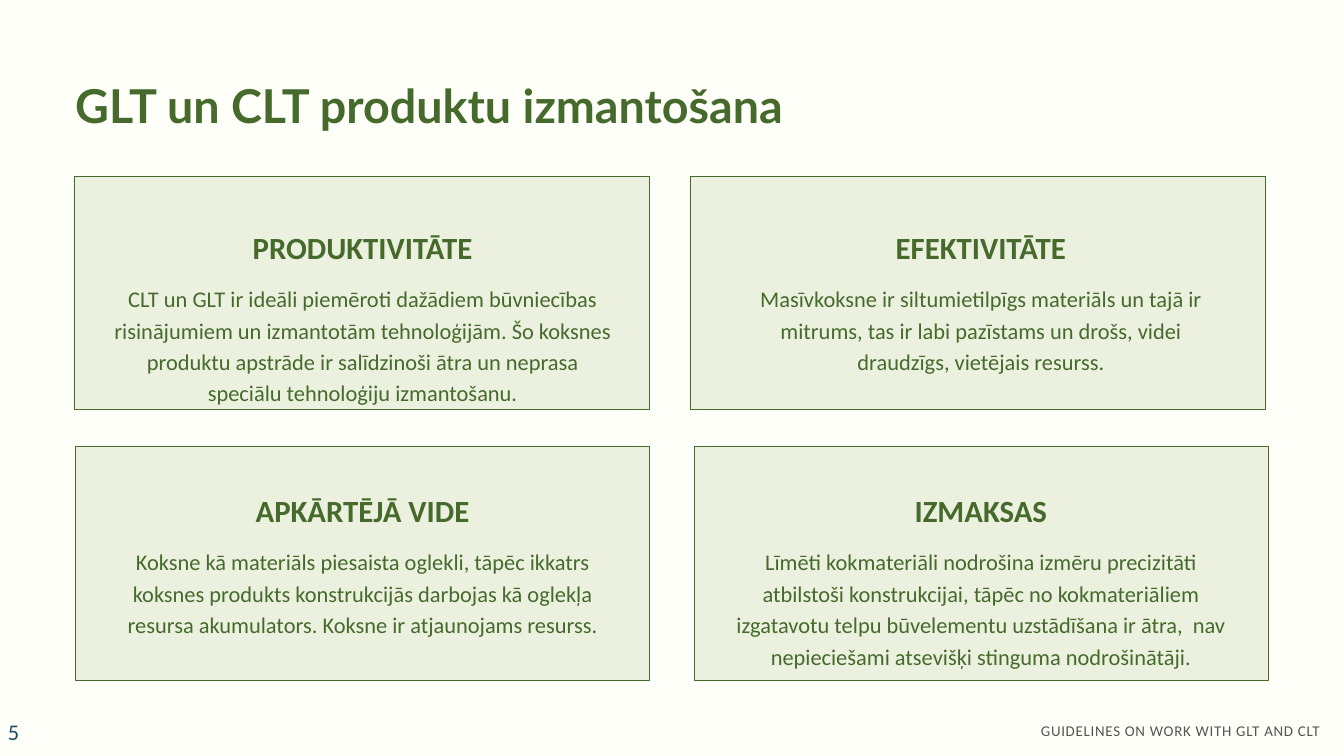
"""Build the slide on the use of GLT and CLT products."""
from pptx import Presentation
from pptx.dml.color import RGBColor
from pptx.enum.shapes import MSO_SHAPE as SHAPE
from pptx.enum.text import MSO_ANCHOR as ANCHOR, MSO_AUTO_SIZE as AUTO, PP_ALIGN as ALIGN
from pptx.util import Cm, Pt

COLORS = {
    "background": "FEFFF8",
    "green": "456A2C",
    "card": "EBF1DE",
    "footer": "52584D",
    "number": "1E4D65",
}
CARDS = [
    (2.82, 6.65, 4.32, 8.59, 4.85, "PRODUKTIVITĀTE",
     "CLT un GLT ir ideāli piemēroti dažādiem būvniecības risinājumiem un izmantotām "
     "tehnoloģijām. Šo koksnes produktu apstrāde ir salīdzinoši ātra un neprasa "
     "speciālu tehnoloģiju izmantošanu."),
    (26.11, 6.65, 27.69, 8.59, 3.63, "EFEKTIVITĀTE",
     "Masīvkoksne ir siltumietilpīgs materiāls un tajā ir mitrums, tas ir labi pazīstams "
     "un drošs, videi draudzīgs, vietējais resurss."),
    (2.84, 16.87, 4.32, 18.54, 3.63, "APKĀRTĒJĀ VIDE",
     "Koksne kā materiāls piesaista oglekli, tāpēc ikkatrs koksnes produkts konstrukcijās "
     "darbojas kā oglekļa resursa akumulators. Koksne ir atjaunojams resurss."),
    (26.24, 16.87, 27.69, 18.54, 4.85, "IZMAKSAS",
     "Līmēti kokmateriāli nodrošina izmēru precizitāti atbilstoši konstrukcijai, tāpēc no "
     "kokmateriāliem izgatavotu telpu būvelementu uzstādīšana ir ātra,  nav nepieciešami "
     "atsevišķi stinguma nodrošinātāji."),
]


def color(name):
    return RGBColor.from_string(COLORS[name])


def write(sp, text, size, spacing=None, align=ALIGN.CENTER, font="Calibri",
          ink="green", bold=False, tracking=0):
    tf = sp.text_frame
    tf.word_wrap = True
    tf.auto_size = AUTO.NONE
    tf.vertical_anchor = ANCHOR.TOP
    tf.margin_left = tf.margin_top = tf.margin_right = tf.margin_bottom = 0
    p = tf.paragraphs[0]
    p.alignment = align
    if spacing:
        p.line_spacing = Pt(spacing)
    p.font.name = font
    p.font.size = Pt(size)
    p.font.bold = bold
    p.font.color.rgb = color(ink)
    r = p.add_run()
    r.text = text
    if tracking:
        r._r.get_or_add_rPr().set("spc", str(tracking))
    return tf


prs = Presentation()
prs.slide_width, prs.slide_height = Cm(50.8), Cm(28.58)
s = prs.slides.add_slide(prs.slide_layouts[5])
s.background.fill.solid()
s.background.fill.fore_color.rgb = color("background")

title = s.shapes.title
title.left, title.top, title.width, title.height = Cm(2.84), Cm(2.67), Cm(44.98), Cm(2.18)
write(title, "GLT un CLT produktu izmantošana", 50, 66.8, ALIGN.LEFT, "Lato", bold=True)

footer = s.shapes.add_textbox(Cm(28.78), Cm(27.18), Cm(21.13), Cm(0.74))
write(footer, "GUIDELINES ON WORK WITH GLT AND CLT", 16, 22.4, ALIGN.RIGHT,
      ink="footer", tracking=80)

for left, top, text_left, text_top, body_height, heading, body in CARDS:
    card = s.shapes.add_shape(SHAPE.RECTANGLE, Cm(left), Cm(top), Cm(21.72), Cm(8.84))
    card.shadow.inherit = False
    card.fill.solid()
    card.fill.fore_color.rgb = color("card")
    card.line.color.rgb = color("green")
    card.line.width = Pt(0.75)

    group = s.shapes.add_group_shape()
    sp = group.shapes.add_textbox(Cm(text_left), Cm(text_top), Cm(18.77), Cm(1.42))
    write(sp, heading, 33, 41.2, bold=True)
    sp = group.shapes.add_textbox(Cm(text_left), Cm(text_top + 2.03), Cm(18.77), Cm(body_height))
    write(sp, body, 24, 33.6)

number = s.shapes.add_textbox(Cm(0.05), Cm(27.15), Cm(5.92), Cm(1.02))
tf = write(number, "5", 24, align=ALIGN.LEFT, ink="number", tracking=120)
tf.margin_left = Cm(0.25)
tf.vertical_anchor = ANCHOR.MIDDLE

prs.save("out.pptx")
